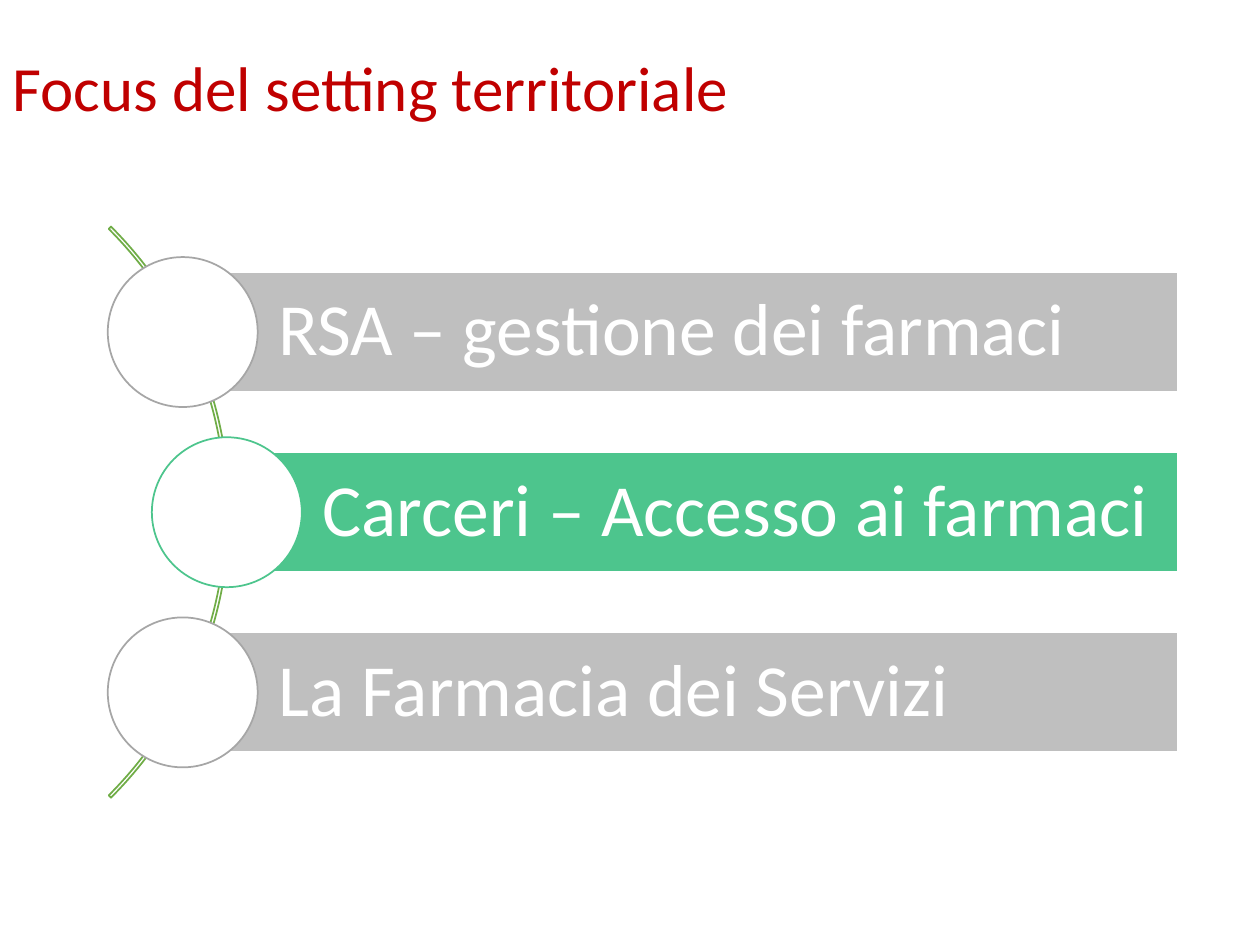
"""Build the slide on the focus areas of the territorial setting."""
from pptx import Presentation
from pptx.dml.color import RGBColor
from pptx.enum.shapes import MSO_SHAPE
from pptx.enum.text import MSO_ANCHOR, MSO_AUTO_SIZE, PP_ALIGN
from pptx.util import Inches, Pt

ARC, BAR, CIRCLE = MSO_SHAPE.BLOCK_ARC, MSO_SHAPE.RECTANGLE, MSO_SHAPE.OVAL
LEFT, MIDDLE, NO_FIT = PP_ALIGN.LEFT, MSO_ANCHOR.MIDDLE, MSO_AUTO_SIZE.NONE
WHITE, GREEN, RED = "FFFFFF", "4DC58D", "C00000"
LIGHT_GREY, GREY, ARC_GREEN = "BFBFBF", "A6A6A6", "70AD47"


def add_figure(page, kind, left, top, width, height, line, fill=None):
    figure = page.shapes.add_shape(
        kind, Inches(left), Inches(top), Inches(width), Inches(height))
    figure.shadow.inherit = False
    figure.line.color.rgb = RGBColor.from_string(line)
    figure.line.width = Pt(1)
    if fill:
        figure.fill.solid()
        figure.fill.fore_color.rgb = RGBColor.from_string(fill)
    else:
        figure.fill.background()
    return figure


def write(box, text, size, color, inset=0.1, margin=0.05):
    frame = box.text_frame
    frame.word_wrap = True
    frame.auto_size = NO_FIT
    frame.vertical_anchor = MIDDLE
    frame.margin_left = Inches(inset)
    frame.margin_right = Inches(0.1)
    frame.margin_top = frame.margin_bottom = Inches(margin)
    para = frame.paragraphs[0]
    para.alignment = LEFT
    para.line_spacing = 0.9
    span = para.add_run()
    span.text = text
    span.font.name = "Calibri"
    span.font.size = Pt(size)
    span.font.color.rgb = RGBColor.from_string(color)


deck = Presentation()
deck.slide_width, deck.slide_height = Inches(10), Inches(7.5)
page = deck.slides.add_slide(deck.slide_layouts[5])

title = page.shapes.title
title.left, title.top = Inches(0), Inches(0)
title.width, title.height = Inches(8.62), Inches(1.45)
write(title, "Focus del setting territoriale", size=36, color=RED)

arc = add_figure(page, ARC, -4.59, 0.86, 6.41, 6.41, line=ARC_GREEN)
for index, value in enumerate((189, 27, 0.004)):
    arc.adjustments[index] = value

bar_right, bar_height, diameter = 9.35, 0.95, 1.19
first_center, pitch = 2.635, 1.43
topics = [
    ("RSA – gestione dei farmaci", 1.45, LIGHT_GREY, GREY),
    ("Carceri – Accesso ai farmaci", 1.8, GREEN, GREEN),
    ("La Farmacia dei Servizi", 1.45, LIGHT_GREY, GREY),
]
for row, (topic, left, fill, outline) in enumerate(topics):
    center = first_center + row * pitch
    bar = add_figure(page, BAR, left, center - bar_height / 2,
                     bar_right - left, bar_height, line=WHITE, fill=fill)
    write(bar, topic, size=42, color=WHITE, inset=0.76, margin=0.12)
    add_figure(page, CIRCLE, left - diameter / 2, center - diameter / 2,
               diameter, diameter, line=outline, fill=WHITE)

deck.save("out.pptx")
